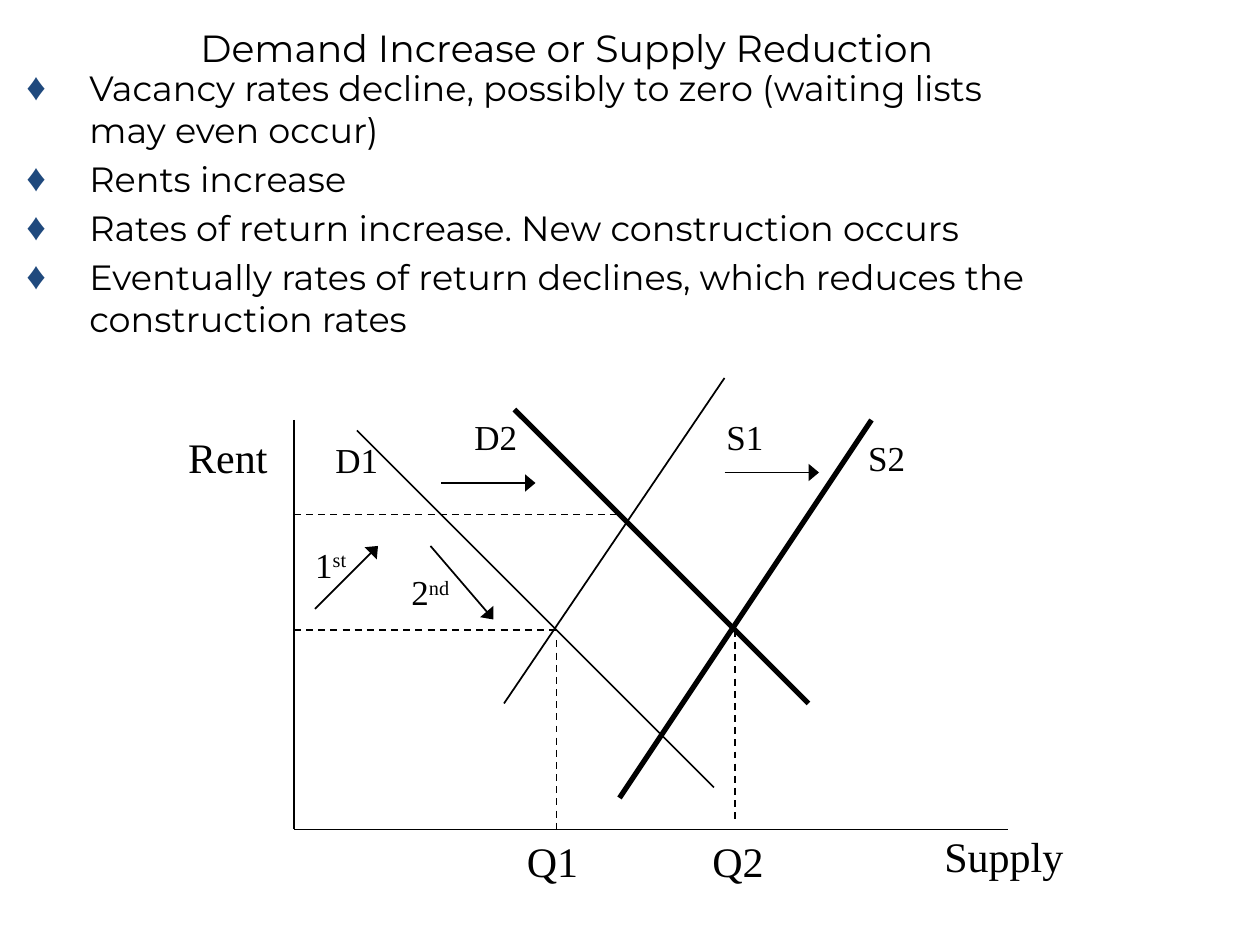
from dataclasses import dataclass

from lxml import etree
from pptx import Presentation
from pptx.dml.color import RGBColor
from pptx.enum import dml, shapes, text
from pptx.oxml.ns import qn
from pptx.util import Pt


@dataclass(frozen=True)
class Theme:
    ink: str = "000000"
    bullet: str = "1F497D"
    sans: str = "Montserrat"
    serif: str = "Times New Roman"
    title: float = 21.6
    body: float = 20
    axis: float = 24
    thin: float = 1
    bold: float = 3


T = Theme()

BULLETS = [
    "Vacancy rates decline, possibly to zero (waiting lists may even occur)",
    "Rents increase",
    "Rates of return increase. New construction occurs",
    "Eventually rates of return declines, which reduces the construction rates",
]

# Lines as x1, y1, x2, y2
AXES = [(168, 240, 168, 474), (168, 474, 576, 474)]
OLD_CURVES = [(204, 246, 408, 450), (414, 216, 288, 402)]
NEW_CURVES = [(294, 234, 462, 402), (498, 240, 354, 456)]
GUIDES = [(168, 294, 354, 294), (168, 360, 318, 360),
          (318, 366, 318, 474), (420, 360, 420, 468)]
ARROWS = [(252, 276, 306, 276), (414, 270, 468, 270),
          (180, 348, 216, 312), (246, 312, 282, 354)]

# Labels as text, superscript, left, top, width
CURVE_LABELS = [
    ("D1", "", 184.5, 247, 40), ("D2", "", 264, 234, 40),
    ("S1", "", 408, 234, 37), ("S2", "", 489, 246, 37),
    ("1", "st", 173, 307, 38), ("2", "nd", 228, 322.5, 38),
]
AXIS_LABELS = [
    ("Q1", "", 294, 474, 45), ("Q2", "", 400, 474, 45),
    ("Rent", "", 100.5, 243, 61), ("Supply", "", 532.5, 471, 84),
]


def add_run(p, words, *, size, font, color=T.ink, raised=False):
    r = p.add_run()
    r.text = words
    r.font.size = Pt(size)
    r.font.name = font
    r.font.color.rgb = RGBColor.from_string(color)
    if raised:
        r.font._element.set("baseline", "30000")


def add_box(s, x, y, w, h, *, wrap=True, grow=True):
    tf = s.shapes.add_textbox(Pt(x), Pt(y), Pt(w), Pt(h)).text_frame
    tf.word_wrap = wrap
    fit = text.MSO_AUTO_SIZE
    tf.auto_size = fit.SHAPE_TO_FIT_TEXT if grow else fit.NONE
    return tf


def add_bullet(p):
    p.space_before = Pt(4)
    pPr = p._p.get_or_add_pPr()
    pPr.set("marL", str(Pt(36)))
    pPr.set("indent", str(Pt(-36)))
    color = etree.SubElement(pPr, qn("a:buClr"))
    etree.SubElement(color, qn("a:srgbClr"), val=T.bullet)
    etree.SubElement(pPr, qn("a:buSzPct"), val="110000")
    etree.SubElement(pPr, qn("a:buFont"), typeface=T.serif)
    etree.SubElement(pPr, qn("a:buChar"), char="♦")


def add_line(s, x1, y1, x2, y2, *, width=T.thin, dashed=False, arrow=False):
    c = s.shapes.add_connector(shapes.MSO_CONNECTOR.STRAIGHT,
                               Pt(x1), Pt(y1), Pt(x2), Pt(y2))
    c.line.color.rgb = RGBColor.from_string(T.ink)
    c.line.width = Pt(width)
    if dashed:
        c.line.dash_style = dml.MSO_LINE.DASH
    spPr = c._element.spPr
    if arrow:
        etree.SubElement(spPr.find(qn("a:ln")), qn("a:tailEnd"),
                         type="triangle", w="lg", len="med")
    etree.SubElement(spPr, qn("a:effectLst"))


def add_label(s, words, raised, x, y, w, *, size):
    p = add_box(s, x, y, w, size * 1.2 + 7.2, wrap=False).paragraphs[0]
    add_run(p, words, size=size, font=T.serif)
    if raised:
        add_run(p, raised, size=size, font=T.serif, raised=True)


def add_title(s):
    tf = add_box(s, 6, 21, 636, 12, grow=False)
    tf.vertical_anchor = text.MSO_ANCHOR.MIDDLE
    p = tf.paragraphs[0]
    p.alignment = text.PP_ALIGN.CENTER
    add_run(p, "Demand Increase or Supply Reduction", size=T.title, font=T.sans)


def add_bullets(s):
    tf = add_box(s, 8, 34.5, 607, 191.5)
    for i, words in enumerate(BULLETS):
        p = tf.add_paragraph() if i else tf.paragraphs[0]
        add_bullet(p)
        add_run(p, words, size=T.body, font=T.sans)


def add_diagram(s):
    # Axes, curves, guides and shift arrows
    for group, style in [(AXES, {}), (OLD_CURVES, {}),
                         (NEW_CURVES, {"width": T.bold}),
                         (GUIDES, {"dashed": True}),
                         (ARROWS, {"arrow": True})]:
        for ends in group:
            add_line(s, *ends, **style)
    # Labels
    for group, size in [(CURVE_LABELS, T.body), (AXIS_LABELS, T.axis)]:
        for label in group:
            add_label(s, *label, size=size)


def main():
    prs = Presentation()
    prs.slide_width, prs.slide_height = Pt(720), Pt(540)
    s = prs.slides.add_slide(prs.slide_layouts[6])
    add_title(s)
    add_bullets(s)
    add_diagram(s)
    prs.save("out.pptx")


if __name__ == "__main__":
    main()
